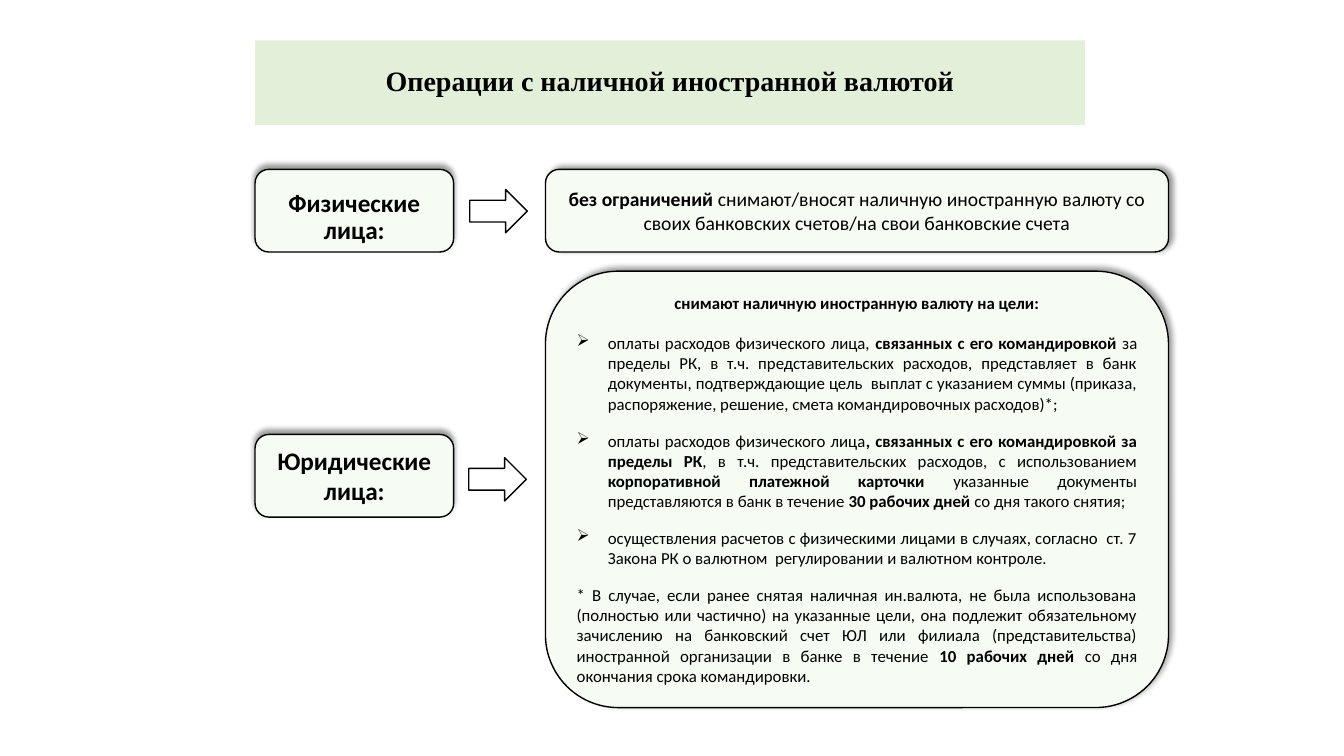
from dataclasses import dataclass

from lxml.etree import SubElement
from pptx import Presentation
from pptx.dml.color import RGBColor
from pptx.enum.shapes import MSO_SHAPE
from pptx.enum.text import MSO_ANCHOR, PP_ALIGN
from pptx.oxml.ns import qn
from pptx.shapes.autoshape import Shape
from pptx.slide import Slide
from pptx.util import Emu, Pt

EMU_PER_PX = 9144
BLACK = "000000"
WHITE = "FFFFFF"
TITLE_GREEN = "E2F0D9"
PALE_GREEN = "F6FBF3"
BULLET_INDENT = 31


@dataclass(frozen=True)
class Box:
    left: int
    top: int
    width: int
    height: int


@dataclass(frozen=True)
class Line:
    text: str
    size: int
    align: PP_ALIGN = PP_ALIGN.CENTER
    space_after: int = 0
    bullet: bool = False
    spacing: float = 1.0
    font: str = "Calibri"


@dataclass(frozen=True)
class Card:
    box: Box
    shadow_angle: int
    lines: tuple[Line, ...]
    margin_top: int = 5
    margin_bottom: int = 5


def px(value: int) -> Emu:
    return Emu(value * EMU_PER_PX)


def color(value: str) -> RGBColor:
    return RGBColor.from_string(value)


def add_block(slide: Slide, kind: MSO_SHAPE, box: Box, fill: str, outlined: bool) -> Shape:
    shape = slide.shapes.add_shape(
        kind, px(box.left), px(box.top), px(box.width), px(box.height)
    )
    shape.shadow.inherit = False
    shape.fill.solid()
    shape.fill.fore_color.rgb = color(fill)
    if outlined:
        shape.line.color.rgb = color(BLACK)
        shape.line.width = Pt(1)
    else:
        shape.line.fill.background()
    return shape


def add_shadow(shape: Shape, angle: int) -> None:
    effects = shape._element.spPr.find(qn("a:effectLst"))
    shadow = SubElement(
        effects, qn("a:outerShdw"), blurRad=str(Pt(4)), dist=str(Pt(3)),
        dir=str(angle * 60000), algn="ctr", rotWithShape="0",
    )
    shade = SubElement(shadow, qn("a:srgbClr"), val=BLACK)
    SubElement(shade, qn("a:alpha"), val="40000")


def write_lines(shape: Shape, lines: tuple[Line, ...]) -> None:
    frame = shape.text_frame
    frame.word_wrap = True
    frame.vertical_anchor = MSO_ANCHOR.MIDDLE
    for index, line in enumerate(lines):
        paragraph = frame.add_paragraph() if index else frame.paragraphs[0]
        if line.bullet:
            properties = paragraph._p.get_or_add_pPr()
            properties.set("marL", str(px(BULLET_INDENT)))
            properties.set("indent", str(-px(BULLET_INDENT)))
            SubElement(properties, qn("a:buChar"), char="➢")
        paragraph.alignment = line.align
        paragraph.line_spacing = line.spacing
        paragraph.space_after = Pt(line.space_after)
        paragraph.font.name = line.font
        paragraph.font.size = Pt(line.size)
        paragraph.font.color.rgb = color(BLACK)
        for part, text in enumerate(line.text.split("**")):
            if text:
                run = paragraph.add_run()
                run.text = text
                run.font.bold = part % 2 == 1


def add_card(slide: Slide, card: Card) -> None:
    shape = add_block(slide, MSO_SHAPE.ROUNDED_RECTANGLE, card.box, PALE_GREEN, True)
    add_shadow(shape, card.shadow_angle)
    shape.text_frame.margin_top = px(card.margin_top)
    shape.text_frame.margin_bottom = px(card.margin_bottom)
    write_lines(shape, card.lines)


def bullet(text: str) -> Line:
    return Line(text, 12, PP_ALIGN.JUSTIFY, 12, bullet=True)


TITLE = Line(
    "**Операции c наличной иностранной валютой**", 20, spacing=0.9, font="Times New Roman"
)
CARDS = (
    Card(
        Box(253, 168, 197, 82), 270,
        (Line("**Физические лица:**", 18, spacing=0.9),),
        margin_top=14, margin_bottom=0,
    ),
    Card(Box(253, 431, 197, 82), 270, (Line("**Юридические лица:**", 18),)),
    Card(
        Box(541, 168, 618, 82), 315,
        (Line(
            "**без ограничений **снимают/вносят наличную иностранную валюту со "
            "своих банковских счетов/на свои банковские счета", 14,
        ),),
    ),
    Card(
        Box(541, 269, 618, 433), 315,
        (
            Line("**снимают наличную иностранную валюту на цели:**", 12, space_after=14),
            bullet(
                "оплаты расходов физического лица, **связанных с его командировкой **"
                "за пределы РК, в т.ч. представительских расходов, представляет в банк "
                "документы, подтверждающие цель  выплат с указанием суммы (приказа, "
                "распоряжение, решение, смета командировочных расходов)*;"
            ),
            bullet(
                "оплаты расходов физического лица**, связанных с его командировкой за "
                "пределы РК**, в т.ч. представительских расходов, с использованием "
                "**корпоративной платежной карточки **указанные документы "
                "представляются в банк в течение **30 рабочих дней **со дня такого снятия;"
            ),
            bullet(
                "осуществления расчетов с физическими лицами в случаях, согласно  ст. 7 "
                "Закона РК о валютном  регулировании и валютном контроле."
            ),
            Line(
                "* В случае, если ранее снятая наличная ин.валюта, не была использована "
                "(полностью или частично) на указанные цели, она подлежит обязательному "
                "зачислению на банковский счет ЮЛ или филиала (представительства) "
                "иностранной организации в банке в течение **10 рабочих дней **со дня "
                "окончания срока командировки.", 12, PP_ALIGN.JUSTIFY,
            ),
        ),
    ),
)
ARROWS = (Box(466, 188, 57, 43), Box(465, 454, 57, 43))


def main() -> None:
    presentation = Presentation()
    presentation.slide_width = px(1333)
    presentation.slide_height = px(750)
    slide = presentation.slides.add_slide(presentation.slide_layouts[6])

    title = add_block(slide, MSO_SHAPE.RECTANGLE, Box(253, 40, 823, 84), TITLE_GREEN, False)
    write_lines(title, (TITLE,))
    for card in CARDS:
        add_card(slide, card)
    for arrow in ARROWS:
        add_block(slide, MSO_SHAPE.RIGHT_ARROW, arrow, WHITE, True)

    presentation.save("out.pptx")


if __name__ == "__main__":
    main()
